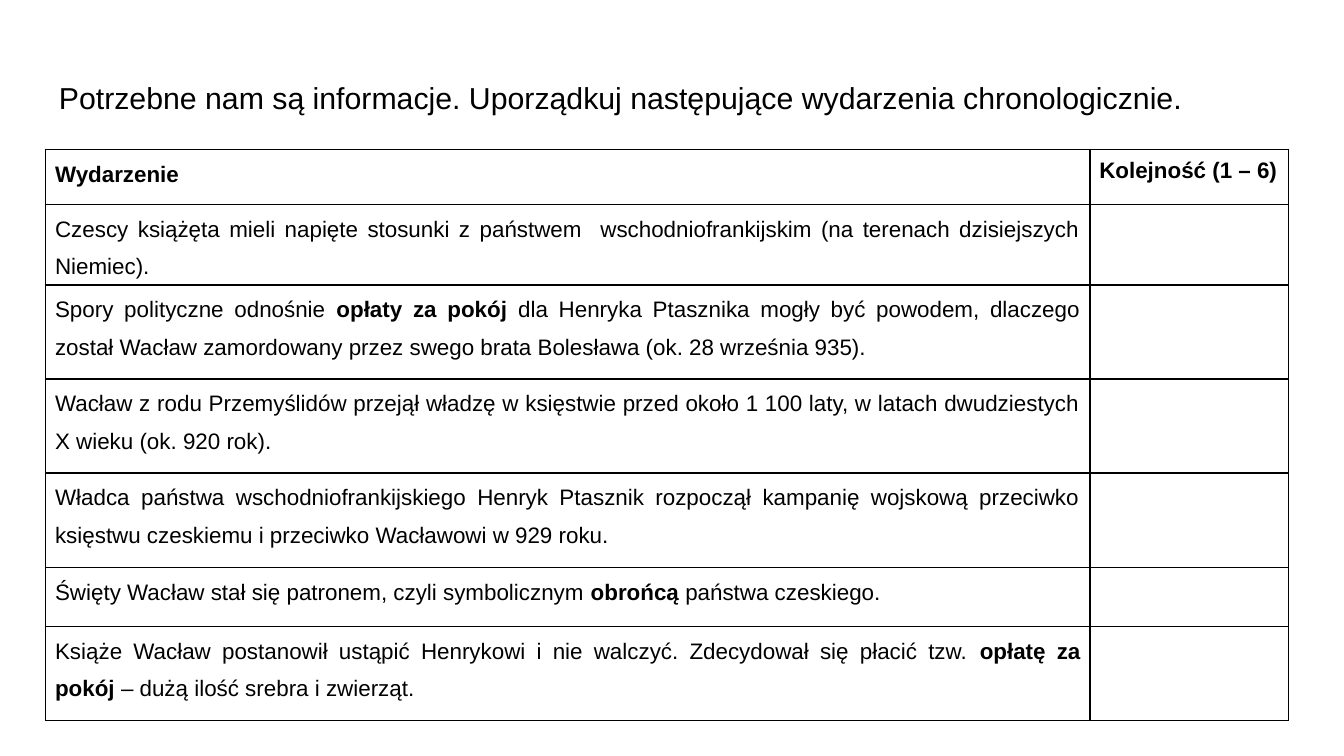
from dataclasses import dataclass

from lxml.etree import SubElement
from pptx import Presentation
from pptx.dml.color import RGBColor
from pptx.enum.text import MSO_ANCHOR, PP_ALIGN as Align
from pptx.oxml.ns import qn
from pptx.table import _Cell as Cell
from pptx.text.text import TextFrame
from pptx.util import Inches, Pt

COLORS = {"text": "000000", "border": "000000"}
FONT = "Arial"
COL_WIDTHS = (7.77, 1.48)


@dataclass(frozen=True)
class Event:
    """A table row; asterisks in the text switch bold on and off."""
    text: str
    height: float = 0.7


EVENTS = (
    Event("Czescy książęta mieli napięte stosunki z państwem  wschodniofrankijskim "
          "(na terenach dzisiejszych Niemiec).", 0.44),
    Event("Spory polityczne odnośnie *opłaty za pokój* dla Henryka Ptasznika mogły być powodem, "
          "dlaczego został Wacław zamordowany przez swego brata Bolesława (ok. 28 września 935)."),
    Event("Wacław z rodu Przemyślidów przejął władzę w księstwie przed około 1 100 laty, "
          "w latach dwudziestych X wieku (ok. 920 rok)."),
    Event("Władca państwa wschodniofrankijskiego Henryk Ptasznik rozpoczął kampanię wojskową "
          "przeciwko księstwu czeskiemu i przeciwko Wacławowi w 929 roku."),
    Event("Święty Wacław stał się patronem, czyli symbolicznym *obrońcą* państwa czeskiego.", 0.44),
    Event("Książe Wacław postanowił ustąpić Henrykowi i nie walczyć. Zdecydował się płacić tzw. "
          "*opłatę za pokój* – dużą ilość srebra i zwierząt."),
)


def write(tf: TextFrame, text: str, *, size: float = 12, align: Align = Align.LEFT,
          spacing: float = 1.0) -> None:
    """Fill a text frame with one paragraph, bold between asterisks."""
    tf.word_wrap = True
    p = tf.paragraphs[0]
    p.alignment = align
    p.line_spacing = spacing
    for i, part in enumerate(text.split("*")):
        if part:
            r = p.add_run()
            r.text = part
            r.font.name = FONT
            r.font.size = Pt(size)
            r.font.bold = i % 2 == 1
            r.font.color.rgb = RGBColor.from_string(COLORS["text"])


def style_cell(cell: Cell, vertical_margin: float) -> None:
    """Give a cell its margins, thin borders and no fill."""
    cell.margin_left = cell.margin_right = Inches(0.07)
    cell.margin_top = cell.margin_bottom = Inches(vertical_margin)
    cell.vertical_anchor = MSO_ANCHOR.TOP
    tc_pr = cell._tc.get_or_add_tcPr()
    for side in ("L", "R", "T", "B"):
        ln = SubElement(tc_pr, qn(f"a:ln{side}"), w=str(Pt(0.75)))
        fill = SubElement(ln, qn("a:solidFill"))
        SubElement(fill, qn("a:srgbClr"), val=COLORS["border"])
    cell.fill.background()


def main() -> None:
    """Build the slide and save it."""
    prs = Presentation()
    prs.slide_width = Inches(10)
    prs.slide_height = prs.slide_width * 9 // 16
    s = prs.slides.add_slide(prs.slide_layouts[6])

    title = s.shapes.add_textbox(Inches(0.34), Inches(0.49), Inches(9.32), Inches(0.63))
    tf = title.text_frame
    tf.margin_left = tf.margin_right = tf.margin_top = tf.margin_bottom = Inches(0.1)
    write(tf, "Potrzebne nam są informacje. Uporządkuj następujące wydarzenia chronologicznie.",
          size=16.2)

    rows = (Event("*Wydarzenie*", 0.41), *EVENTS)
    frame = s.shapes.add_table(len(rows), len(COL_WIDTHS), Inches(0.34), Inches(1.11),
                               Inches(sum(COL_WIDTHS)), Inches(4.27))
    table = frame.table
    table.first_row = table.horz_banding = False
    for column, width in zip(table.columns, COL_WIDTHS):
        column.width = Inches(width)
    for i, row in enumerate(rows):
        table.rows[i].height = Inches(row.height)
        event, order = table.rows[i].cells
        style_cell(event, 0)
        style_cell(order, 0.07)
        write(event.text_frame, row.text, align=Align.JUSTIFY, spacing=1.5)
    write(table.cell(0, 1).text_frame, "*Kolejność (1 – 6)*")
    frame.height = Inches(4.27)

    prs.save("out.pptx")


if __name__ == "__main__":
    main()
